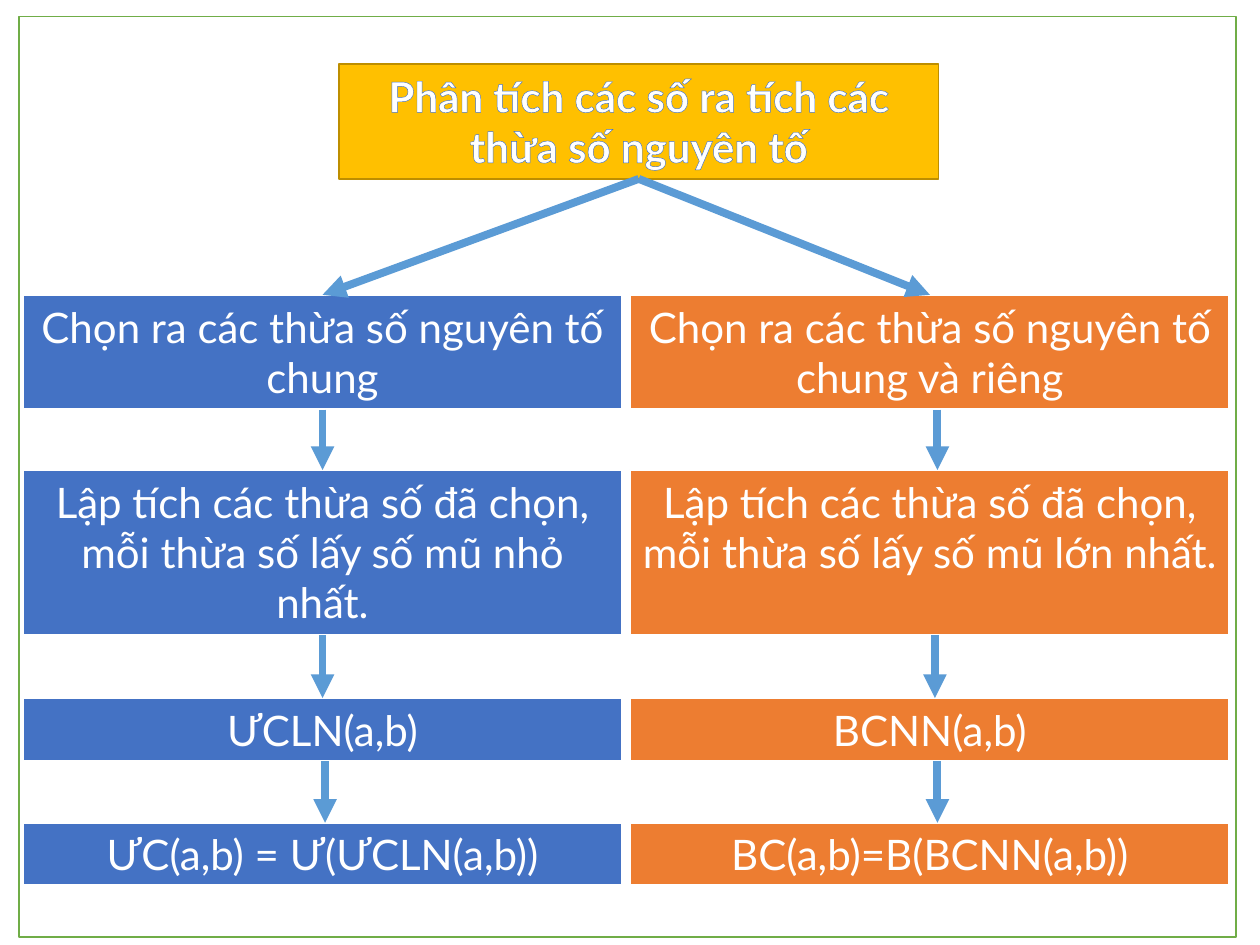
from dataclasses import dataclass

import pptx
import pptx.dml.color
import pptx.enum.shapes
import pptx.enum.text
import pptx.oxml
import pptx.oxml.ns
import pptx.util
from pptx.util import Inches

FONT = "Lato"
WHITE = "FFFFFF"
ARROW_BLUE = "5B9BD5"
BOX_WIDTH = 4.76
ROOT_LEFT, ROOT_TOP, ROOT_HEIGHT = 2.69, 0.51, 0.91
ROW_TOPS = (2.34, 3.73, 5.54, 6.53)
ROW_HEIGHTS = (0.91, 1.31, 0.5, 0.5)
TOP_SIDE, BOTTOM_SIDE = 0, 2


@dataclass(frozen=True)
class Branch:
    left: float
    fill: str
    steps: tuple[str, ...]
    arrow_shifts: tuple[float, ...]  # distance of each arrow from the column centre


BRANCHES = (
    Branch(0.18, "4472C4", (
        "Chọn ra các thừa số nguyên tố chung",
        "Lập tích các thừa số đã chọn, mỗi thừa số lấy số mũ nhỏ nhất.",
        "ƯCLN(a,b)",
        "ƯC(a,b) = Ư(ƯCLN(a,b))",
    ), (0, 0, 0.02)),
    Branch(5, "ED7D31", (
        "Chọn ra các thừa số nguyên tố chung và riêng",
        "Lập tích các thừa số đã chọn, mỗi thừa số lấy số mũ lớn nhất.",
        "BCNN(a,b)",
        "BC(a,b)=B(BCNN(a,b))",
    ), (0.06, 0.04, 0.06)),
)


def color(value: str) -> pptx.dml.color.RGBColor:
    return pptx.dml.color.RGBColor.from_string(value)


def add_rectangle(slide, left: float, top: float, width: float, height: float,
                  fill: str, line: str, line_width: float):
    shape = slide.shapes.add_shape(
        pptx.enum.shapes.MSO_SHAPE.RECTANGLE,
        Inches(left), Inches(top), Inches(width), Inches(height))
    shape.shadow.inherit = False
    shape.fill.solid()
    shape.fill.fore_color.rgb = color(fill)
    shape.line.color.rgb = color(line)
    shape.line.width = pptx.util.Pt(line_width)
    return shape


def add_label(shape, text: str, bold: bool = False):
    frame = shape.text_frame
    frame.word_wrap = True
    frame.auto_size = pptx.enum.text.MSO_AUTO_SIZE.SHAPE_TO_FIT_TEXT
    frame.vertical_anchor = pptx.enum.text.MSO_ANCHOR.TOP
    paragraph = frame.paragraphs[0]
    paragraph.alignment = pptx.enum.text.PP_ALIGN.CENTER
    run = paragraph.add_run()
    run.text = text
    run.font.name = FONT
    run.font.size = pptx.util.Pt(24)
    run.font.bold = bold
    run.font.color.rgb = color(WHITE)
    return run


def outline_text(run, line: str, width: float) -> None:
    outline = pptx.oxml.parse_xml(
        f'<a:ln {pptx.oxml.ns.nsdecls("a")} w="{pptx.util.Pt(width)}">'
        f'<a:solidFill><a:srgbClr val="{line}"/></a:solidFill></a:ln>')
    run.font._element.insert(0, outline)


def add_arrow(slide, upper, lower, shift: float = 0) -> None:
    """Draw an arrow between two boxes, joined to both unless it is shifted."""
    offset = Inches(shift)
    connector = slide.shapes.add_connector(
        pptx.enum.shapes.MSO_CONNECTOR.STRAIGHT,
        upper.left + upper.width // 2 + offset, upper.top + upper.height,
        lower.left + lower.width // 2 + offset, lower.top)
    if not shift:
        connector.begin_connect(upper, BOTTOM_SIDE)
        connector.end_connect(lower, TOP_SIDE)
    connector.line.color.rgb = color(ARROW_BLUE)
    connector.line.width = pptx.util.Pt(4.5)
    namespace = pptx.oxml.ns.nsdecls("a")
    connector.line._get_or_add_ln().append(
        pptx.oxml.parse_xml(f'<a:tailEnd {namespace} type="triangle"/>'))
    connector._element.spPr.append(pptx.oxml.parse_xml(f"<a:effectLst {namespace}/>"))


def main() -> None:
    presentation = pptx.Presentation()
    presentation.slide_width = Inches(10)
    presentation.slide_height = Inches(7.5)
    slide = presentation.slides.add_slide(presentation.slide_layouts[6])

    add_rectangle(slide, 0.15, 0.13, 9.66, 7.31, WHITE, "70AD47", 1)
    root = add_rectangle(slide, ROOT_LEFT, ROOT_TOP, BOX_WIDTH, ROOT_HEIGHT,
                         "FFC000", "BD8E00", 1)
    title = add_label(root, "Phân tích các số ra tích các thừa số nguyên tố", bold=True)
    outline_text(title, "4472C4", 0.8)

    for branch in BRANCHES:
        boxes = []
        for text, top, height in zip(branch.steps, ROW_TOPS, ROW_HEIGHTS):
            box = add_rectangle(slide, branch.left, top, BOX_WIDTH, height,
                                branch.fill, WHITE, 1.5)
            add_label(box, text)
            boxes.append(box)
        add_arrow(slide, root, boxes[0])
        for upper, lower, shift in zip(boxes, boxes[1:], branch.arrow_shifts):
            add_arrow(slide, upper, lower, shift)

    presentation.save("out.pptx")


if __name__ == "__main__":
    main()
